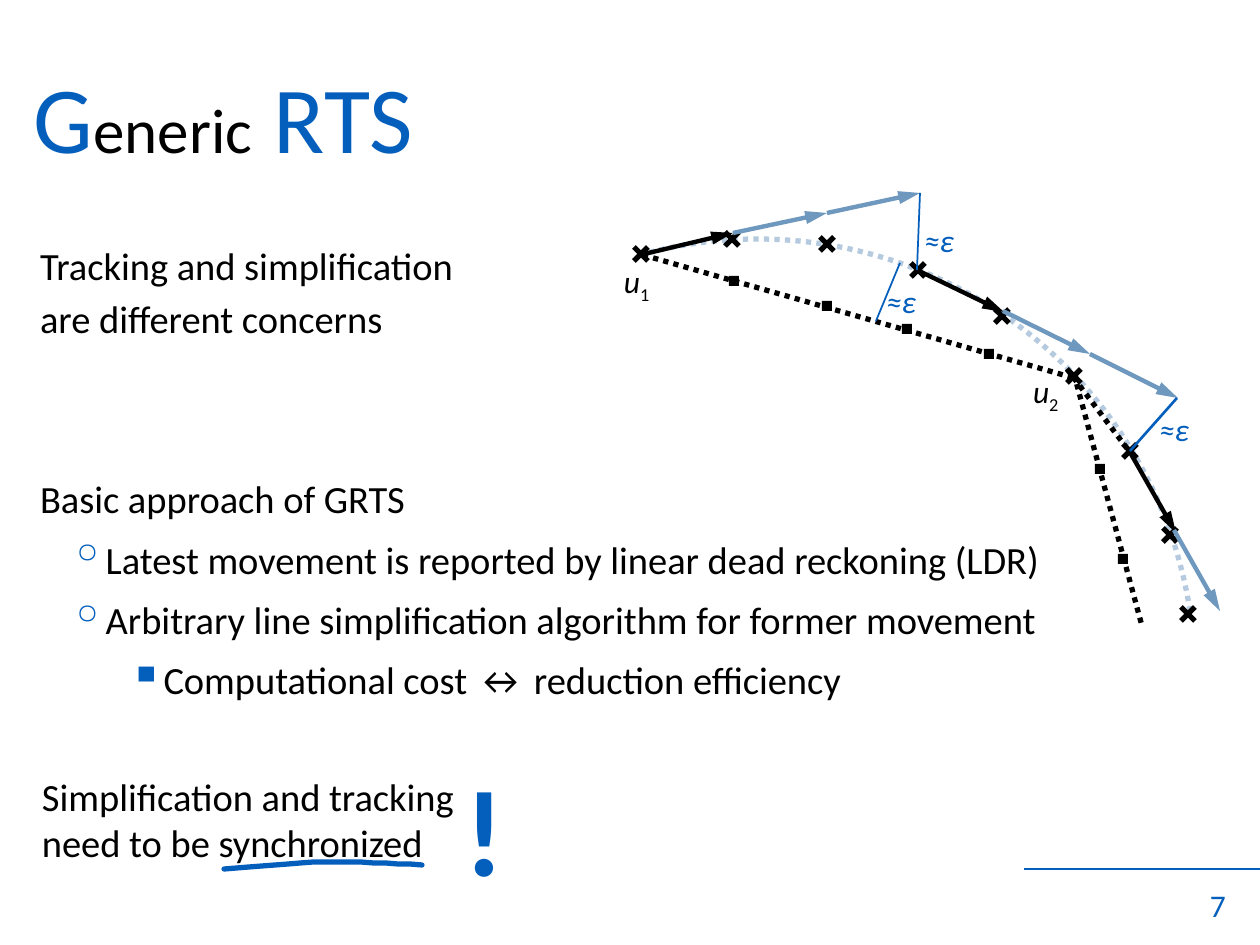
from dataclasses import dataclass

from lxml import etree
from pptx import Presentation
from pptx import util as u
from pptx.dml.color import RGBColor
from pptx.enum import dml, shapes, text
from pptx.oxml.ns import qn

SCALE = 914400 / 126  # EMU per px


@dataclass(frozen=True)
class Theme:
    font: str = "Calibri"
    ink: str = "000000"
    accent: str = "045EBC"
    steel: str = "6F98BF"
    pale: str = "B5CADE"
    cap: int = 54
    small_cap: int = 36
    body: int = 22
    label: int = 18
    shout: int = 70


def px(n):
    return u.Emu(round(n * SCALE))


def bezier(a, b, c, d, steps=8):
    """Points along a cubic curve, without its start."""
    for i in range(1, steps + 1):
        t = i / steps
        s = 1 - t
        yield tuple(s**3 * p + 3 * s * s * t * q + 3 * s * t * t * r + t**3 * e
                    for p, q, r, e in zip(a, b, c, d))


class Board:
    def __init__(self, slide, theme):
        self.s = slide
        self.t = theme

    def stroke(self, line, color, width, dotted=False):
        line.color.rgb = RGBColor.from_string(color)
        line.width = u.Pt(width)
        if dotted:
            line.dash_style = dml.MSO_LINE.ROUND_DOT

    def line(self, a, b, color, width, dotted=False, arrow=False):
        sp = self.s.shapes.add_connector(
            shapes.MSO_CONNECTOR.STRAIGHT, *map(px, (*a, *b)))
        self.stroke(sp.line, color, width, dotted)
        if arrow:
            etree.SubElement(sp.line._get_or_add_ln(), qn("a:tailEnd"),
                             type="triangle", w="med", len="lg")
        etree.SubElement(sp._element.spPr, qn("a:effectLst"))

    def route(self, points, color):
        """Chain of arrows from point to point."""
        for a, b in zip(points, points[1:]):
            self.line(a, b, color, 2.5, arrow=True)

    def cross(self, x, y, half=7):
        for dy in (half, -half):
            self.line((x - half, y + dy), (x + half, y - dy), self.t.ink, 3)

    def square(self, x, y, side=10):
        sp = self.s.shapes.add_shape(
            shapes.MSO_SHAPE.RECTANGLE, *map(px, (x, y, side, side)))
        sp.shadow.inherit = False
        sp.fill.solid()
        sp.fill.fore_color.rgb = RGBColor.from_string(self.t.ink)
        sp.line.fill.background()

    def arc(self, x, y, side, start, end, rotation):
        sp = self.s.shapes.add_shape(
            shapes.MSO_SHAPE.ARC, *map(px, (x, y, side, side)))
        sp.shadow.inherit = False
        sp.adjustments[0], sp.adjustments[1] = start * 0.6, end * 0.6
        sp.rotation = rotation
        sp.fill.background()
        self.stroke(sp.line, self.t.pale, 3, dotted=True)

    def curve(self, start, *segments):
        points = [start]
        for segment in segments:
            points.extend(bezier(points[-1], *segment))
        fb = self.s.shapes.build_freeform(*start, scale=SCALE)
        fb.add_line_segments(points[1:], close=False)
        sp = fb.convert_to_shape()
        sp.shadow.inherit = False
        sp.fill.background()
        self.stroke(sp.line, self.t.accent, 3)
        sp.line._get_or_add_ln().set("cap", "rnd")

    def style(self, runs, size, color, bold=False, italic=False):
        for r in runs:
            f = r.font
            f.name, f.size, f.bold, f.italic = self.t.font, u.Pt(size), bold, italic
            f.color.rgb = RGBColor.from_string(color)

    def span(self, p, words, size, color):
        r = p.add_run()
        r.text = words
        self.style([r], size, color)
        return r

    def text(self, box, words, size, color, wrap=False, inset=(0, 0), **style):
        """Text box; returns its frame. inset is (sides, top and bottom)."""
        tf = self.s.shapes.add_textbox(*map(px, box)).text_frame
        tf.word_wrap = wrap
        tf.margin_left = tf.margin_right = px(inset[0])
        tf.margin_top = tf.margin_bottom = px(inset[1])
        tf.text = words
        for p in tf.paragraphs:
            self.style(p.runs, size, color, **style)
        return tf

    def bullet(self, p, char, left, hang=30):
        pPr = p._p.get_or_add_pPr()
        pPr.set("marL", str(px(left)))
        pPr.set("indent", str(px(-hang if char else 0)))
        if char:
            clr = etree.SubElement(pPr, qn("a:buClr"))
            etree.SubElement(clr, qn("a:srgbClr"), val=self.t.accent)
            etree.SubElement(pPr, qn("a:buSzPct"), val="120000")
            etree.SubElement(pPr, qn("a:buChar"), char=char)

    def vertex(self, x, y, index):
        tf = self.text((x, y, 29, 38), "u", self.t.label, self.t.ink, italic=True)
        r = self.span(tf.paragraphs[0], index, self.t.label, self.t.ink)
        r.font._element.set("baseline", "-25000")


def write_text(b, t):
    b.line((1260, 869), (1024, 869), t.accent, 1)
    tf = b.text((1123, 867, 103, 63), "7", t.label, t.accent, inset=(0, 6))
    tf.vertical_anchor = text.MSO_ANCHOR.BOTTOM
    tf.paragraphs[0].alignment = text.PP_ALIGN.RIGHT

    tf = b.text((34, 59, 891, 141), "G", t.cap, t.accent, wrap=True)
    b.span(tf.paragraphs[0], "eneric", t.small_cap, t.ink)
    b.span(tf.paragraphs[0], " RTS", t.cap, t.accent)

    body = [  # words, bullet, left margin, space before in points
        ("Tracking and simplification\vare different concerns", None, 30, 4.4),
        ("Basic approach of GRTS", None, 30, 73),
        ("Latest movement is reported by linear dead reckoning (LDR)", "◦", 89, 4.4),
        ("Arbitrary line simplification algorithm for former movement", "◦", 89, 4.4),
        ("Computational cost ↔ reduction efficiency", "▪", 149, 4.4),
    ]
    tf = b.text((10, 236, 1113, 501), "\n".join(row[0] for row in body),
                t.body, t.ink, wrap=True)
    for p, (_, char, left, before) in zip(tf.paragraphs, body):
        p.line_spacing = 1.14
        p.space_before = u.Pt(before)
        b.bullet(p, char, left)

    b.curve((422, 865), ((389, 863), (358, 862), (325, 862)),
            ((292, 863), (258, 866), (224, 869)))
    b.text((29, 767, 442, 106), "Simplification and tracking\vneed to be synchronized",
           t.body, t.ink, inset=(13, 6))
    b.text((452, 748, 66, 161), "!", t.shout, t.accent, inset=(13, 6), bold=True)


def draw_trajectory(b, t):
    b.arc(319, 239, 876, start=270, end=7.71, rotation=344.4)
    for x, y in [(641, 254), (732, 239), (827, 244), (918, 270), (1002, 316),
                 (1074, 376), (1130, 451), (1170, 535), (1188, 614)]:
        b.cross(x, y)
    for a, z in [((643, 255), (1074, 378)), ((1074, 374), (1142, 626)),
                 ((1067, 369), (1129, 451))]:
        b.line(a, z, t.ink, 3, dotted=True)
    for x, y in [(729, 276), (822, 301), (902, 324), (984, 349),
                 (1095, 464), (1118, 554)]:
        b.square(x, y)

    for reported, predicted in [
            ([(640, 255), (733, 233)], [(733, 233), (827, 213), (920, 193)]),
            ([(917, 270), (1004, 312)], [(1003, 311), (1090, 354), (1178, 398)]),
            ([(1131, 454), (1176, 533)], [(1174, 530), (1220, 611)])]:
        b.route(reported, t.ink)
        b.route(predicted, t.steel)

    for a, z, width, label in [((920, 193), (917, 270), 1, (924, 221)),
                               ((876, 321), (900, 263), 1, (886, 282)),
                               ((1177, 398), (1130, 451), 1.5, (1159, 410))]:
        b.line(a, z, t.accent, width)
        b.text((*label, 32, 38), "≈ε", t.label, t.accent, italic=True)
    b.vertex(624, 262, "1")
    b.vertex(1033, 372, "2")


def main():
    prs = Presentation()
    prs.slide_width, prs.slide_height = px(1260), px(945)
    t = Theme()
    b = Board(prs.slides.add_slide(prs.slide_layouts[6]), t)
    write_text(b, t)
    draw_trajectory(b, t)
    prs.save("out.pptx")


if __name__ == "__main__":
    main()
